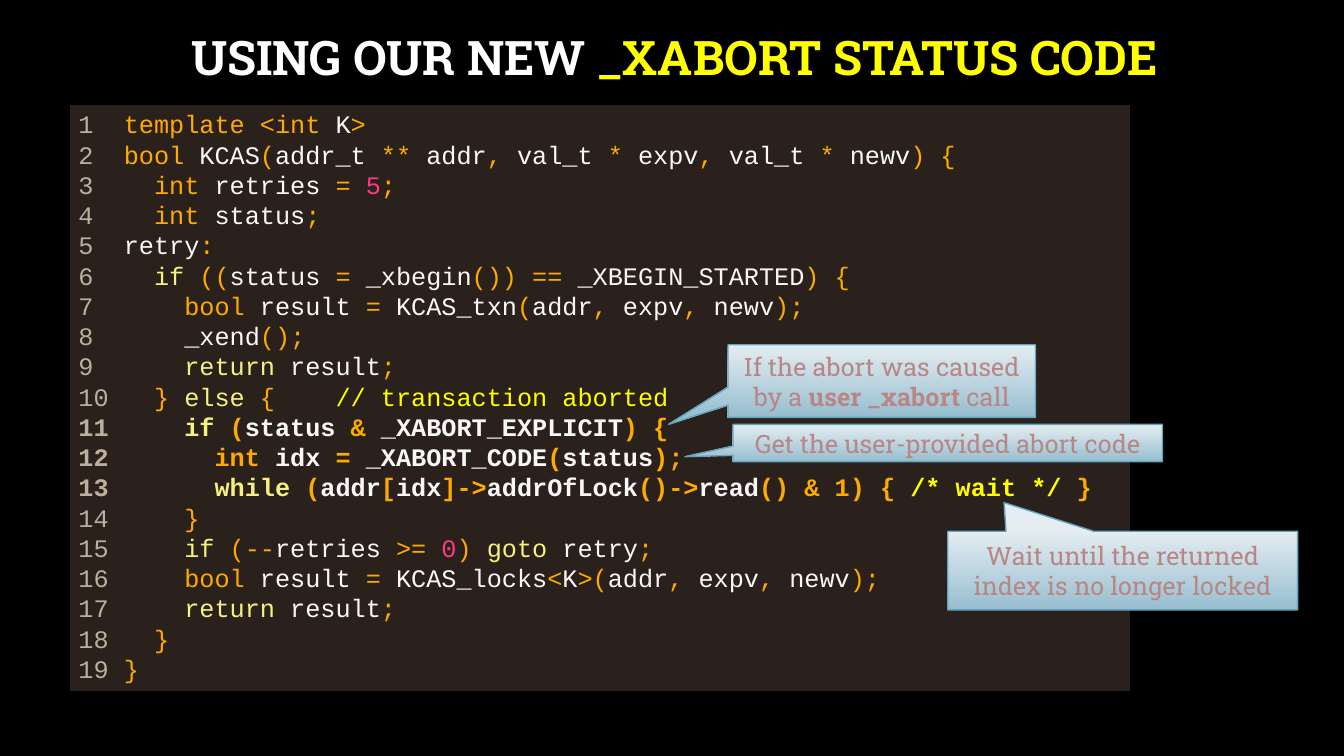
import itertools

import pptx
import pptx.dml.color
import pptx.enum.shapes
import pptx.enum.text
import pptx.util

Inches = pptx.util.Inches
Pt = pptx.util.Pt
ANCHOR = pptx.enum.text.MSO_ANCHOR
ALIGN = pptx.enum.text.PP_ALIGN
SHAPE = pptx.enum.shapes.MSO_SHAPE

SLAB = "Roboto Slab"
ORANGE, YELLOW, PINK = "FFAA00", "FFFF00", "FF3A83"
NAME, FLOW, GUTTER = "F8F8F8", "F6F080", "BDAE9D"
WORDS = {
    **dict.fromkeys(["template", "int", "bool", "1"], ORANGE),
    **dict.fromkeys(["if", "else", "return", "while", "goto"], FLOW),
    **dict.fromkeys(["5", "0"], PINK),
}
COMMENTS = ["// transaction aborted", "/* wait */"]
BOLD_LINES = range(11, 14)
CODE = """template <int K>
bool KCAS(addr_t ** addr, val_t * expv, val_t * newv) {
  int retries = 5;
  int status;
retry:
  if ((status = _xbegin()) == _XBEGIN_STARTED) {
    bool result = KCAS_txn(addr, expv, newv);
    _xend();
    return result;
  } else {    // transaction aborted
    if (status & _XABORT_EXPLICIT) {
      int idx = _XABORT_CODE(status);
      while (addr[idx]->addrOfLock()->read() & 1) { /* wait */ }
    }
    if (--retries >= 0) goto retry;
    bool result = KCAS_locks<K>(addr, expv, newv);
    return result;
  }
}"""

CALLOUTS = [
    ((7.22, 3.42, 3.05, 0.72), (-0.693, 0.597),
     [("If the abort was caused\nby a ", False), ("user _xabort ", True),
      ("call", False)]),
    ((7.27, 4.21, 4.26, 0.37), (-0.612, 0.368),
     [("Get the user-provided abort code", False)]),
    ((9.4, 5.27, 3.47, 0.78), (-0.339, -0.864),
     [("Wait until the returned index is no longer locked", False)]),
]


def rgb(value):
    """Turn a hex string into a colour."""
    return pptx.dml.color.RGBColor.from_string(value)


def set_all(target, **values):
    """Set several attributes on one object."""
    for name, value in values.items():
        setattr(target, name, value)


def add_text(p, text, color, **font):
    """Add formatted text to a paragraph, breaking at newlines."""
    for i, part in enumerate(text.split("\n")):
        if i:
            p.add_line_break()
        r = p.add_run()
        r.text = part
        set_all(r.font, **font)
        r.font.color.rgb = rgb(color)


def char_kind(char):
    """Class a character as space, word or punctuation."""
    if char == " ":
        return "space"
    return "word" if char.isalnum() or char == "_" else "mark"


def tokens(line):
    """Yield each piece of a code line with its colour."""
    comment = next((c for c in COMMENTS if c in line), None)
    if comment:
        before, _, after = line.partition(comment)
        yield from tokens(before)
        yield comment, YELLOW
        yield from tokens(after)
        return
    for kind, chars in itertools.groupby(line, char_kind):
        token = "".join(chars)
        plain = {"space": GUTTER, "word": NAME, "mark": ORANGE}[kind]
        yield token, WORDS.get(token, plain)


def add_box(s, kind, box, line, width):
    """Add an outlined shape without a shadow."""
    sp = s.shapes.add_shape(kind, *map(Inches, box))
    sp.shadow.inherit = False
    sp.line.color.rgb = rgb(line)
    sp.line.width = Pt(width)
    sp.text_frame.word_wrap = True
    return sp


def add_title(s):
    """Add the two-coloured heading."""
    box = map(Inches, (1.03, 0.24, 11.32, 0.71))
    tf = s.shapes.add_textbox(*box).text_frame
    set_all(tf, word_wrap=True, vertical_anchor=ANCHOR.MIDDLE)
    p = tf.paragraphs[0]
    set_all(p, alignment=ALIGN.CENTER, line_spacing=0.9)
    for text, color in [("USING OUR NEW ", "FFFFFF"),
                        ("_XABORT STATUS CODE", YELLOW)]:
        add_text(p, text, color, name=SLAB, size=Pt(34), bold=True)


def add_code(s):
    """Add the numbered and coloured code panel."""
    sp = add_box(s, SHAPE.RECTANGLE, (0.68, 1.03, 10.54, 5.84), "000000", 1.5)
    sp.fill.solid()
    sp.fill.fore_color.rgb = rgb("2A211C")
    tf = sp.text_frame
    tf.vertical_anchor = ANCHOR.TOP
    for number, line in enumerate(CODE.split("\n"), 1):
        p = tf.paragraphs[0] if number == 1 else tf.add_paragraph()
        set_all(p, alignment=ALIGN.LEFT, line_spacing=Pt(21.6))
        for text, color in [(f"{number:<3}", GUTTER), *tokens(line)]:
            add_text(p, text, color, name="Courier New", size=Pt(18),
                     bold=number in BOLD_LINES)


def add_callout(s, box, tip, runs):
    """Add a gradient callout that points at a code line."""
    sp = add_box(s, SHAPE.RECTANGULAR_CALLOUT, box, "64A4BD", 1)
    for i, offset in enumerate(tip):
        sp.adjustments[i] = offset
    sp.fill.gradient()
    sp.fill.gradient_angle = 270
    for stop, color, position in zip(sp.fill.gradient_stops,
                                     ("E4EDF1", "97BED0"), (0, 1)):
        stop.color.rgb = rgb(color)
        stop.position = position
    tf = sp.text_frame
    tf.vertical_anchor = ANCHOR.MIDDLE
    p = tf.paragraphs[0]
    p.alignment = ALIGN.CENTER
    for text, bold in runs:
        add_text(p, text, "B88684", name=SLAB, size=Pt(18), bold=bold)


def main():
    """Build and save the slide."""
    prs = pptx.Presentation()
    set_all(prs, slide_width=Inches(13.33), slide_height=Inches(7.5))
    s = prs.slides.add_slide(prs.slide_layouts[6])
    s.background.fill.solid()
    s.background.fill.fore_color.rgb = rgb("000000")
    add_title(s)
    add_code(s)
    for box, tip, runs in CALLOUTS:
        add_callout(s, box, tip, runs)
    prs.save("out.pptx")


if __name__ == "__main__":
    main()
